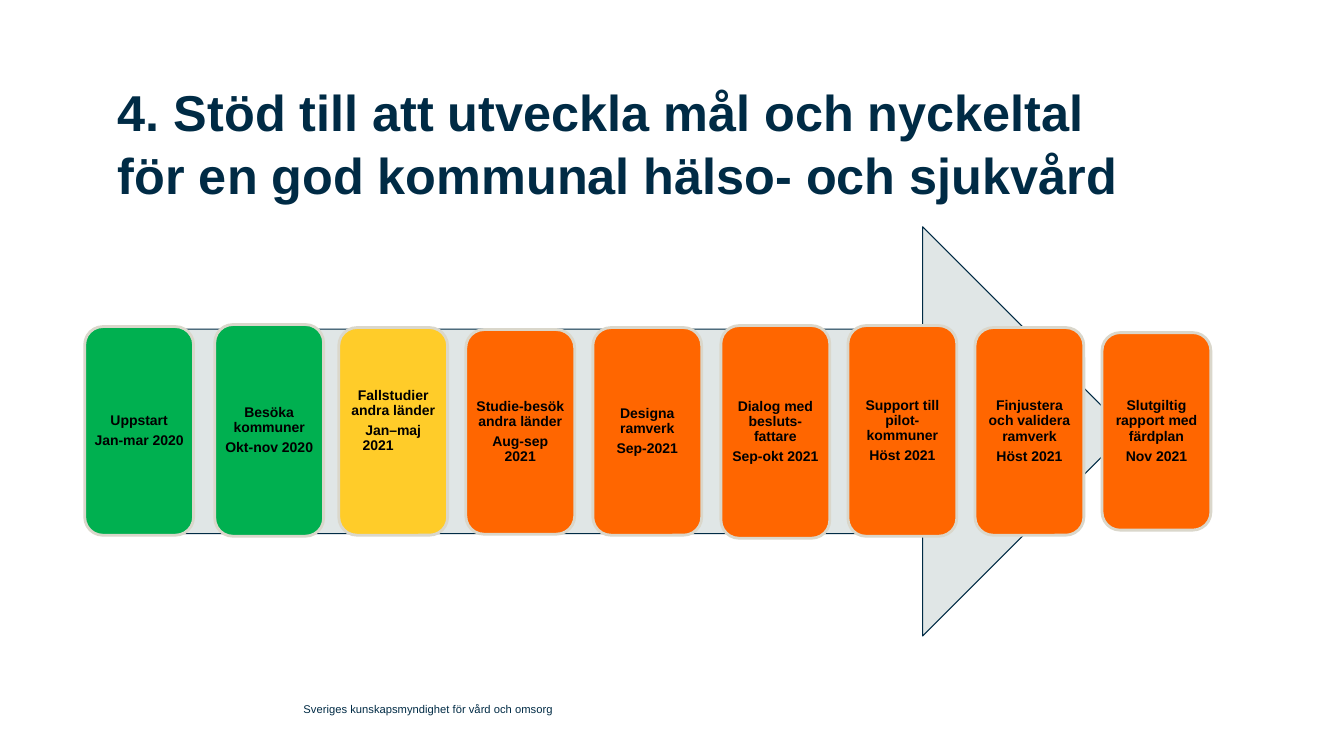
from pptx import Presentation
from pptx.dml.color import RGBColor
from pptx.enum.shapes import MSO_SHAPE
from pptx.enum.text import MSO_ANCHOR, PP_ALIGN
from pptx.util import Inches, Pt

NAVY = RGBColor(0x00, 0x2B, 0x45)
BLACK = RGBColor(0x00, 0x00, 0x00)
MIST = RGBColor(0xE0, 0xE6, 0xE6)
SAND = RGBColor(0xDA, 0xD7, 0xCB)
GREEN = RGBColor(0x00, 0xB0, 0x50)
YELLOW = RGBColor(0xFF, 0xCC, 0x29)
ORANGE = RGBColor(0xFF, 0x66, 0x00)

deck = Presentation()
deck.slide_width, deck.slide_height = Inches(13.33), Inches(7.5)
slide = deck.slides.add_slide(deck.slide_layouts[6])


def add_shape(kind, box, fill, line, width):
    shape = slide.shapes.add_shape(kind, *[Inches(v) for v in box])
    shape.shadow.inherit = False
    shape.fill.solid()
    shape.fill.fore_color.rgb = fill
    shape.line.color.rgb = line
    shape.line.width = Pt(width)
    return shape


def set_text(frame, lines, size, color, bold, inset, anchor):
    """Fill a frame with one paragraph per line and return the paragraphs."""
    frame.word_wrap = True
    frame.vertical_anchor = anchor
    frame.margin_left = frame.margin_right = Inches(inset)
    frame.margin_top = frame.margin_bottom = Inches(inset)
    for i, line in enumerate(lines):
        para = frame.paragraphs[0] if i == 0 else frame.add_paragraph()
        para.text = line
        font = para.font
        font.name, font.size, font.bold = "Arial", Pt(size), bold
        font.color.rgb = color
    return frame.paragraphs


title = slide.shapes.add_textbox(Inches(1.17), Inches(0.75), Inches(10.14), Inches(1.42))
heading = "4. Stöd till att utveckla mål och nyckeltal för en god kommunal hälso- och sjukvård"
set_text(title.text_frame, [heading], 36, NAVY, True, 0, MSO_ANCHOR.TOP)[0].line_spacing = 1.03
title.text_frame.margin_top = Inches(0.04)

footer = slide.shapes.add_textbox(Inches(3.01), Inches(6.89), Inches(5.91), Inches(0.29))
set_text(footer.text_frame, ["Sveriges kunskapsmyndighet för vård och omsorg"],
         8, NAVY, False, 0, MSO_ANCHOR.MIDDLE)

add_shape(MSO_SHAPE.RIGHT_ARROW, (1.67, 2.25, 9.51, 4.06), MIST, NAVY, 0.75)

# left, top, height, fill, step, date
steps = [
    (0.84, 3.24, 2.07, GREEN, "Uppstart", "Jan-mar 2020"),
    (2.13, 3.22, 2.10, GREEN, "Besöka kommuner", "Okt-nov 2020"),
    (3.36, 3.25, 2.06, YELLOW, "Fallstudier andra länder", "Jan–maj", "2021"),
    (4.62, 3.27, 2.03, ORANGE, "Studie-besök andra länder", "Aug-sep 2021"),
    (5.88, 3.25, 2.06, ORANGE, "Designa ramverk", "Sep-2021"),
    (7.15, 3.23, 2.11, ORANGE, "Dialog med besluts-fattare", "Sep-okt 2021"),
    (8.41, 3.23, 2.09, ORANGE, "Support till pilot-kommuner", "Höst 2021"),
    (9.67, 3.25, 2.06, ORANGE, "Finjustera och validera ramverk", "Höst 2021"),
    (10.93, 3.30, 1.96, ORANGE, "Slutgiltig rapport med färdplan", "Nov 2021"),
]
for left, top, height, fill, *lines in steps:
    card = add_shape(MSO_SHAPE.ROUNDED_RECTANGLE, (left, top, 1.08, height), fill, SAND, 2)
    paras = set_text(card.text_frame, lines, 10, BLACK, True, 0.04, MSO_ANCHOR.MIDDLE)
    for para in paras:
        para.alignment = PP_ALIGN.CENTER
        para.line_spacing = 0.9
    paras[0].space_after = Pt(3.5)
    if fill == YELLOW:
        # This card's text sits high, with the year nudged left
        card.text_frame.margin_bottom = Inches(0.24)
        paras[-1]._p.get_or_add_pPr().set("marR", str(Inches(0.3)))

deck.save("out.pptx")
